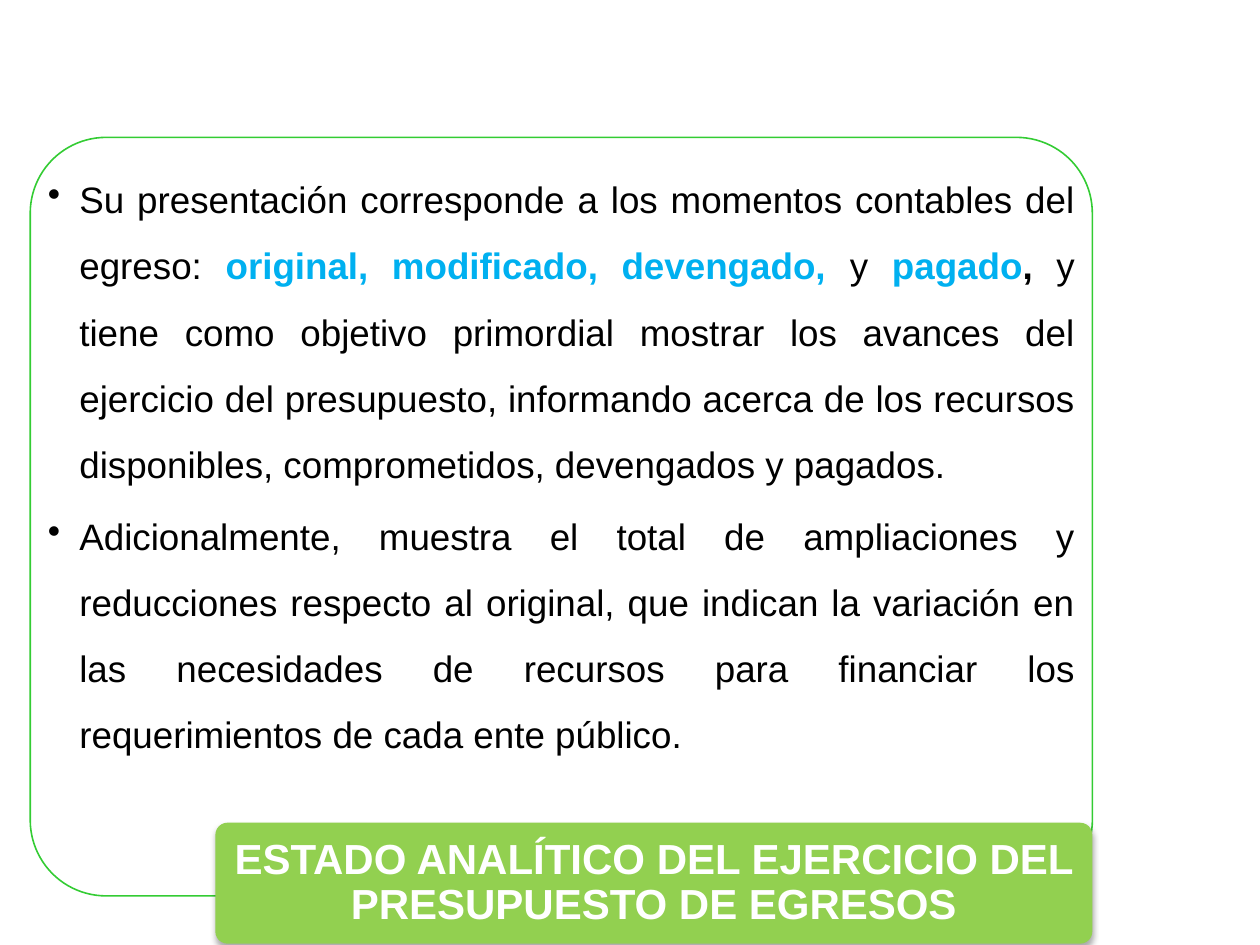
"""Build the slide on the analytical statement of the expenditure budget."""
from dataclasses import dataclass

import lxml.etree
import pptx
import pptx.dml.color
import pptx.enum.shapes
import pptx.enum.text
import pptx.oxml.ns
import pptx.util
from pptx.util import Inches

COLORS = {
    "panel": "FFFFFF",
    "outline": "33CC33",
    "banner": "92D050",
    "title": "FFFFFF",
    "text": "000000",
    "moment": "00B0F0",
    "shadow": "000000",
}
FONT = "Arial"


@dataclass(frozen=True)
class Box:
    left: float
    top: float
    width: float
    height: float

    def lengths(self) -> tuple:
        return tuple(Inches(v) for v in (self.left, self.top, self.width, self.height))


@dataclass(frozen=True)
class Phrase:
    text: str
    color: str = "text"
    bold: bool = False


PANEL = Box(0.24, 1.09, 8.43, 6.02)
BODY = Box(0.24, 1.09, 8.43, 4.73)
BANNER = Box(1.71, 6.53, 6.96, 0.96)
TITLE = "ESTADO ANALÍTICO DEL EJERCICIO DEL PRESUPUESTO DE EGRESOS"
POINTS = [
    [
        Phrase("Su presentación corresponde a los momentos contables del egreso: "),
        Phrase("original, modificado, devengado, ", "moment", True),
        Phrase("y "),
        Phrase("pagado", "moment", True),
        Phrase(",", bold=True),
        Phrase(
            " y tiene como objetivo primordial mostrar los avances del ejercicio del "
            "presupuesto, informando acerca de los recursos disponibles, "
            "comprometidos, devengados y pagados."
        ),
    ],
    [
        Phrase(
            "Adicionalmente, muestra el total de ampliaciones y reducciones respecto "
            "al original, que indican la variación en las necesidades de recursos para "
            "financiar los requerimientos de cada ente público."
        )
    ],
]


def rgb(name: str) -> pptx.dml.color.RGBColor:
    """Return a named colour."""
    return pptx.dml.color.RGBColor.from_string(COLORS[name])


def add_element(parent, tag: str, **attributes):
    """Append a drawing element to its parent."""
    values = {key: str(value) for key, value in attributes.items()}
    return lxml.etree.SubElement(parent, pptx.oxml.ns.qn(tag), values)


def add_rounded(slide, box: Box, fill: str):
    """Draw a filled rounded rectangle without line or shadow."""
    shape = slide.shapes.add_shape(
        pptx.enum.shapes.MSO_SHAPE.ROUNDED_RECTANGLE, *box.lengths()
    )
    shape.adjustments[0] = 0.1
    shape.shadow.inherit = False
    shape.fill.solid()
    shape.fill.fore_color.rgb = rgb(fill)
    shape.line.fill.background()
    return shape


def add_panel(slide) -> None:
    """Draw the outlined, slightly transparent panel."""
    panel = add_rounded(slide, PANEL, "panel")
    panel.line.color.rgb = rgb("outline")
    panel.line.width = pptx.util.Pt(0.9)
    fill_color = panel.fill._xPr.find(".//" + pptx.oxml.ns.qn("a:srgbClr"))
    add_element(fill_color, "a:alpha", val=90000)


def add_banner(slide) -> None:
    """Draw the green banner with its soft shadow."""
    banner = add_rounded(slide, BANNER, "banner")
    effects = banner.element.spPr.find(pptx.oxml.ns.qn("a:effectLst"))
    shadow = add_element(
        effects,
        "a:outerShdw",
        blurRad=pptx.util.Pt(3.5),
        dist=pptx.util.Pt(2.2),
        dir=5400000,
        algn="ctr",
        rotWithShape=0,
    )
    shade = add_element(shadow, "a:srgbClr", val=COLORS["shadow"])
    add_element(shade, "a:alpha", val=32000)


def set_frame(frame, side: float, edge: float, anchor) -> None:
    """Set the wrapping, insets and anchor of a text frame."""
    frame.word_wrap = True
    frame.auto_size = pptx.enum.text.MSO_AUTO_SIZE.NONE
    frame.margin_left = frame.margin_right = Inches(side)
    frame.margin_top = frame.margin_bottom = Inches(edge)
    frame.vertical_anchor = anchor


def add_point(paragraph, phrases: list[Phrase]) -> None:
    """Write one justified bullet point."""
    paragraph.alignment = pptx.enum.text.PP_ALIGN.JUSTIFY
    paragraph.line_spacing = 1.5
    paragraph.space_after = pptx.util.Pt(3.5)
    properties = paragraph._p.get_or_add_pPr()
    properties.set("marL", str(Inches(0.25)))
    properties.set("indent", str(Inches(-0.25)))
    add_element(properties, "a:buChar", char="•")
    paragraph.font.name = FONT
    paragraph.font.size = pptx.util.Pt(21)
    for phrase in phrases:
        run = paragraph.add_run()
        run.text = phrase.text
        run.font.bold = phrase.bold
        run.font.color.rgb = rgb(phrase.color)


def add_body(slide) -> None:
    """Write the bullet points over the panel."""
    frame = slide.shapes.add_textbox(*BODY.lengths()).text_frame
    set_frame(frame, 0.14, 0.14, pptx.enum.text.MSO_ANCHOR.TOP)
    for index, phrases in enumerate(POINTS):
        paragraph = frame.add_paragraph() if index else frame.paragraphs[0]
        add_point(paragraph, phrases)


def place_title(slide) -> None:
    """Move the title onto the banner and format it."""
    title = slide.shapes.title
    title.left, title.top, title.width, title.height = BANNER.lengths()
    slide.shapes._spTree.append(title.element)
    set_frame(title.text_frame, 0.05, 0.03, pptx.enum.text.MSO_ANCHOR.MIDDLE)
    title.text_frame.text = TITLE
    paragraph = title.text_frame.paragraphs[0]
    paragraph.alignment = pptx.enum.text.PP_ALIGN.CENTER
    paragraph.line_spacing = 0.9
    paragraph.font.name = FONT
    paragraph.font.size = pptx.util.Pt(24)
    paragraph.font.bold = True
    paragraph.font.color.rgb = rgb("title")


def main() -> None:
    """Assemble and save the slide."""
    presentation = pptx.Presentation()
    presentation.slide_width = Inches(10)
    presentation.slide_height = Inches(7.5)
    slide = presentation.slides.add_slide(presentation.slide_layouts[5])
    add_panel(slide)
    add_body(slide)
    add_banner(slide)
    place_title(slide)
    presentation.save("out.pptx")


if __name__ == "__main__":
    main()
